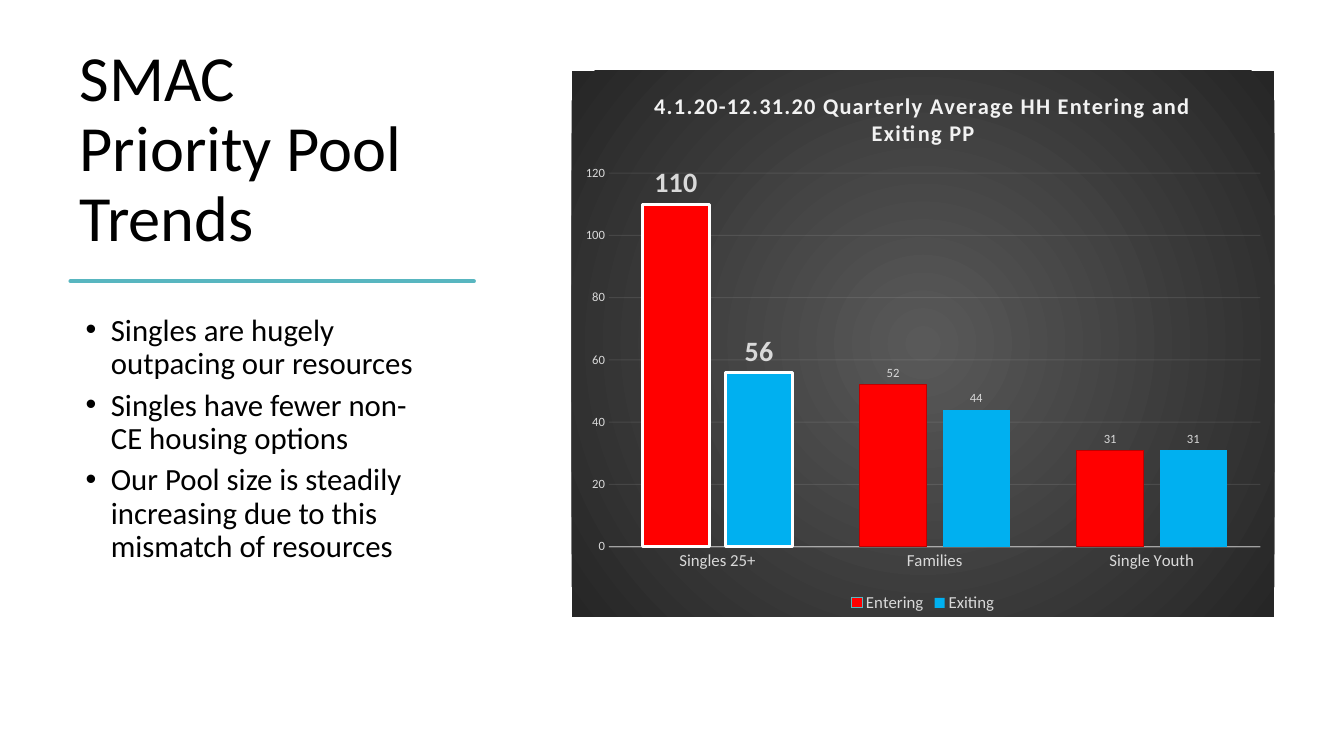
from dataclasses import dataclass

from lxml.etree import SubElement
from pptx import Presentation
from pptx.chart.data import CategoryChartData
from pptx.dml.color import RGBColor
from pptx.enum.chart import XL_CHART_TYPE as ChartType
from pptx.enum.chart import XL_LABEL_POSITION as LabelPosition
from pptx.enum.chart import XL_LEGEND_POSITION as LegendPosition
from pptx.enum.chart import XL_TICK_MARK as TickMark
from pptx.enum.text import MSO_ANCHOR as Anchor
from pptx.enum.text import MSO_AUTO_SIZE as AutoSize
from pptx.enum.text import PP_ALIGN as Align
from pptx.oxml import parse_xml
from pptx.oxml.ns import nsdecls, qn
from pptx.util import Inches, Pt


@dataclass(frozen=True)
class Theme:
    font: str = "Calibri"
    text: str = "000000"
    accent: str = "58B6C0"
    entering: str = "FF0000"
    entering_edge: str = "C00000"
    exiting: str = "00B0F0"
    highlight: str = "FFFFFF"
    chart_title: str = "F2F2F2"
    chart_text: str = "D9D9D9"
    chart_line: str = "F2F2F2"
    chart_center: str = "595959"
    chart_edge: str = "262626"
    title_size: int = 46
    body_size: int = 22
    chart_title_size: int = 16
    callout_size: int = 20
    label_size: int = 12
    value_size: int = 9


THEME = Theme()

BULLETS = (
    "Singles are hugely outpacing our resources",
    "Singles have fewer non-CE housing options",
    "Our Pool size is steadily increasing due to this mismatch of resources",
)
CATEGORIES = ("Singles 25+", "Families", "Single Youth")
ENTERING = (110, 52, 31)
EXITING = (56, 44, 31)

# Brush stroke outline: start point, then cubic segments, in inches.
STROKE_START = (0, 0.02)
STROKE_CURVES = (
    ((0.27, 0), (0.51, 0), (0.68, 0.02)),
    ((0.85, 0.05), (1.07, 0.03), (1.39, 0.02)),
    ((1.71, 0.02), (1.9, 0.04), (2.14, 0.02)),
    ((2.38, 0.01), (2.69, 0.04), (2.89, 0.02)),
    ((3.09, 0.01), (3.42, 0.03), (3.56, 0.02)),
    ((3.56, 0.03), (3.56, 0.04), (3.56, 0.04)),
    ((3.38, 0.05), (2.94, 0.03), (2.78, 0.04)),
    ((2.62, 0.06), (2.34, 0.01), (2, 0.04)),
    ((1.65, 0.07), (1.61, 0.05), (1.29, 0.04)),
    ((0.96, 0.04), (0.62, 0.07), (0, 0.04)),
)


def rgb(code):
    return RGBColor.from_string(code)


def style_font(font, size, color, bold=False):
    font.name, font.size, font.bold = THEME.font, Pt(size), bold
    font.color.rgb = rgb(color)


def place(shape, box):
    shape.left, shape.top, shape.width, shape.height = map(Inches, box)


def add_span(para, text, size):
    span = para.add_run()
    span.text = text
    style_font(span.font, size, THEME.text)
    para.alignment = Align.LEFT
    para.line_spacing = 0.9
    para.space_before = Pt(0)


def fill_title(title, box):
    place(title, box)
    frame = title.text_frame
    frame.word_wrap, frame.auto_size = True, AutoSize.NONE
    frame.vertical_anchor = Anchor.BOTTOM
    add_span(frame.paragraphs[0], "SMAC Priority Pool Trends", THEME.title_size)


def fill_bullets(body, box):
    place(body, box)
    frame = body.text_frame
    frame.word_wrap, frame.auto_size = True, AutoSize.NONE
    frame.vertical_anchor = Anchor.TOP
    for index, text in enumerate(BULLETS):
        para = frame.add_paragraph() if index else frame.paragraphs[0]
        add_span(para, text, THEME.body_size)
        para.space_after = Pt(6)
        props = para._p.get_or_add_pPr()
        props.set("marL", str(Inches(0.31)))
        props.set("indent", str(Inches(-0.25)))
        SubElement(props, qn("a:buFont")).set("typeface", "Arial")
        SubElement(props, qn("a:buChar")).set("char", "•")


def cubic_point(points, t):
    weights = ((1 - t) ** 3, 3 * t * (1 - t) ** 2, 3 * t * t * (1 - t), t ** 3)
    return tuple(sum(w * p[axis] for w, p in zip(weights, points)) for axis in (0, 1))


def add_brush_stroke(page, left, top):
    steps, start, outline = 8, STROKE_START, []
    for curve in STROKE_CURVES:
        outline += [cubic_point((start, *curve), n / steps) for n in range(1, steps + 1)]
        start = curve[-1]
    builder = page.shapes.build_freeform(*STROKE_START, scale=Inches(1))
    builder.add_line_segments(outline, close=True)
    stroke = builder.convert_to_shape(Inches(left), Inches(top))
    stroke.shadow.inherit = False
    stroke.fill.solid()
    stroke.fill.fore_color.rgb = rgb(THEME.accent)
    style_line(stroke.line, THEME.accent, 3)


def style_line(line, color, width, opacity=100):
    line.color.rgb = rgb(color)
    line.width = Pt(width)
    if opacity < 100:
        tint = line.fill._xPr.find(".//" + qn("a:srgbClr"))
        SubElement(tint, qn("a:alpha")).set("val", str(opacity * 1000))


def fill_chart_area(chart):
    """Give the chart a radial gradient, light in the center."""
    stops = ((0, THEME.chart_center), (100, THEME.chart_edge))
    stops_xml = "".join(
        f'<a:gs pos="{pos * 1000}"><a:srgbClr val="{color}"/></a:gs>' for pos, color in stops
    )
    area = parse_xml(
        f'<c:spPr {nsdecls("c", "a")}><a:gradFill><a:gsLst>{stops_xml}</a:gsLst>'
        '<a:path path="circle"><a:fillToRect l="50000" t="50000" r="50000" b="50000"/>'
        "</a:path></a:gradFill><a:ln><a:noFill/></a:ln></c:spPr>"
    )
    chart._chartSpace.find(qn("c:chart")).addnext(area)


def style_axes(chart):
    names, values = chart.category_axis, chart.value_axis
    for axis, size in ((names, THEME.label_size), (values, THEME.value_size)):
        axis.major_tick_mark = axis.minor_tick_mark = TickMark.NONE
        style_font(axis.tick_labels.font, size, THEME.chart_text)
    style_line(names.format.line, THEME.chart_line, 1, 54)
    values.format.line.fill.background()
    values.minimum_scale, values.maximum_scale, values.major_unit = 0, 120, 20
    values.tick_labels.number_format = "0"
    values.tick_labels.number_format_is_linked = False
    style_line(values.major_gridlines.format.line, THEME.chart_line, 0.75, 10)


def style_series(series, color):
    series.format.fill.solid()
    series.format.fill.fore_color.rgb = rgb(color)
    labels = series.data_labels
    labels.show_value, labels.position = True, LabelPosition.OUTSIDE_END
    labels.number_format, labels.number_format_is_linked = "0", False
    style_font(labels.font, THEME.value_size, THEME.chart_text)
    singles = series.points[0]
    singles.format.fill.solid()
    singles.format.fill.fore_color.rgb = rgb(color)
    style_line(singles.format.line, THEME.highlight, 2.25)
    style_font(singles.data_label.font, THEME.callout_size, THEME.chart_text, True)
    singles.data_label.position = LabelPosition.OUTSIDE_END


def add_trend_chart(page, box):
    data = CategoryChartData(number_format="0")
    data.categories = CATEGORIES
    data.add_series("Entering", ENTERING)
    data.add_series("Exiting", EXITING)
    frame = page.shapes.add_chart(ChartType.COLUMN_CLUSTERED, *map(Inches, box), data)
    chart = frame.chart
    style_font(chart.font, 10, THEME.text)
    fill_chart_area(chart)

    chart.has_title = True
    para = chart.chart_title.text_frame.paragraphs[0]
    span = para.add_run()
    span.text = "4.1.20-12.31.20 Quarterly Average HH Entering and Exiting PP"
    style_font(span.font, THEME.chart_title_size, THEME.chart_title, True)
    span.font._element.set("spc", "100")
    chart.chart_title.include_in_layout = False

    chart.has_legend = True
    chart.legend.position = LegendPosition.BOTTOM
    chart.legend.include_in_layout = False
    style_font(chart.legend.font, THEME.label_size, THEME.chart_text)

    style_axes(chart)
    plot = chart.plots[0]
    plot.gap_width, plot.overlap, plot.vary_by_categories = 100, -24, False
    entering, exiting = plot.series
    style_series(entering, THEME.entering)
    style_series(exiting, THEME.exiting)
    style_line(entering.format.line, THEME.accent, 0.75)
    for index in (1, 2):
        bar = entering.points[index].format
        bar.fill.solid()
        bar.fill.fore_color.rgb = rgb(THEME.entering)
        style_line(bar.line, THEME.entering_edge, 0.75)


def main():
    deck = Presentation()
    deck.slide_width, deck.slide_height = Inches(13.33), Inches(7.5)
    page = deck.slides.add_slide(deck.slide_layouts[1])
    fill_title(page.shapes.title, (0.69, 0.7, 3.75, 1.88))
    add_brush_stroke(page, 0.7, 2.79)
    fill_bullets(page.placeholders[1], (0.69, 3.07, 3.75, 3.73))
    add_trend_chart(page, (5.67, 0.7, 6.97, 5.42))
    deck.save("out.pptx")


if __name__ == "__main__":
    main()
